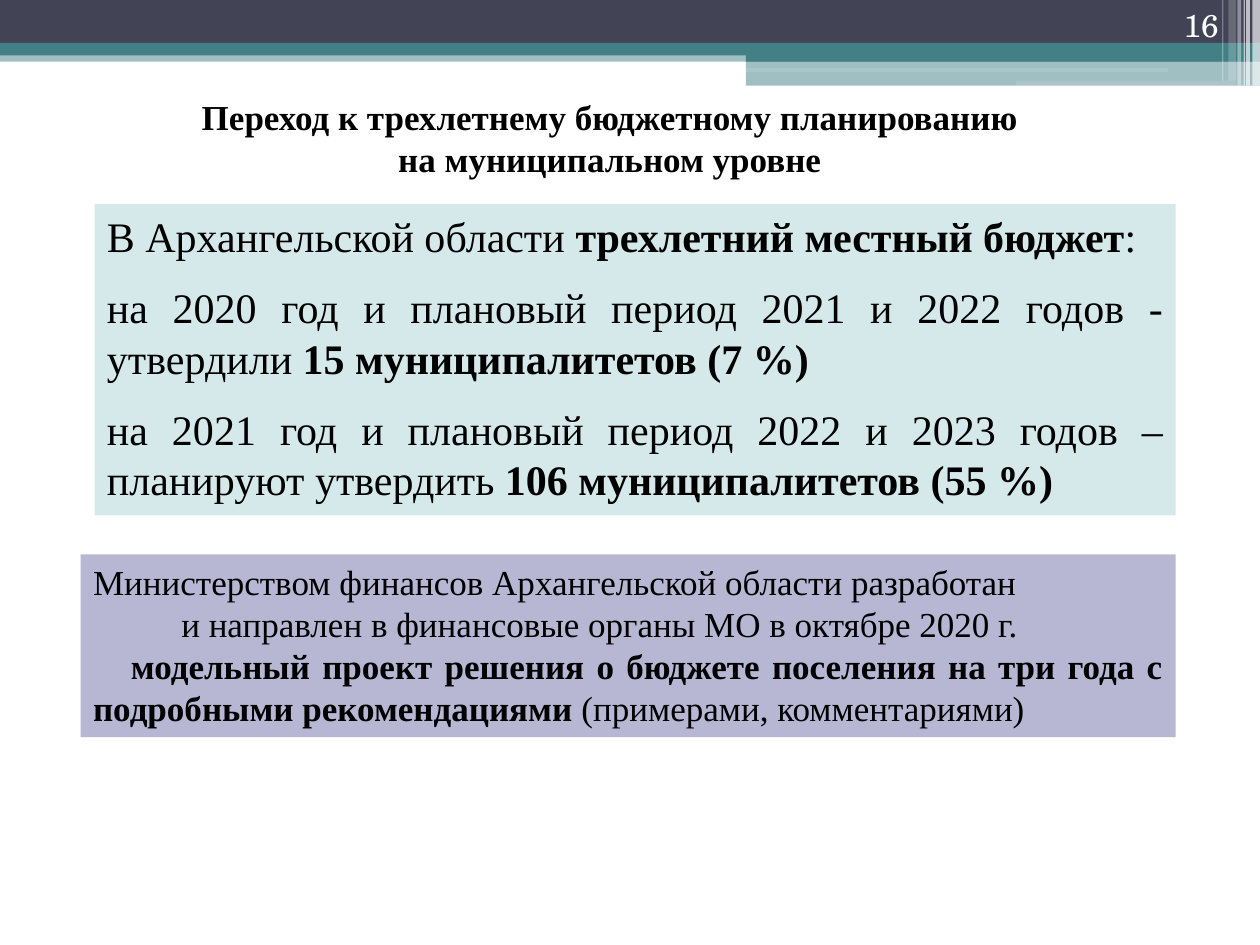
from lxml import etree
from pptx import Presentation
from pptx.dml.color import RGBColor
from pptx.enum.shapes import MSO_SHAPE
from pptx.enum.text import MSO_ANCHOR, MSO_AUTO_SIZE, PP_ALIGN
from pptx.oxml.ns import qn
from pptx.util import Inches, Pt

RECT, ROUND = MSO_SHAPE.RECTANGLE, MSO_SHAPE.ROUNDED_RECTANGLE
TOP, MIDDLE, BOTTOM = MSO_ANCHOR.TOP, MSO_ANCHOR.MIDDLE, MSO_ANCHOR.BOTTOM
LEFT, CENTER, RIGHT = PP_ALIGN.LEFT, PP_ALIGN.CENTER, PP_ALIGN.RIGHT
JUSTIFY = PP_ALIGN.JUSTIFY
FIXED = MSO_AUTO_SIZE.NONE
SERIF, SCHOLA = "Times New Roman", "TeX Gyre Schola"
NAVY, TEAL, WHITE, BLACK = "424456", "438086", "FFFFFF", "000000"
MINT, LILAC = "D6E9EA", "B7B7D4"


def color(code):
    return RGBColor.from_string(code)


def block(slide, box, fill, alpha=100, kind=RECT):
    shape = slide.shapes.add_shape(kind, *map(Inches, box))
    shape.shadow.inherit = False
    shape.line.fill.background()
    shape.fill.solid()
    shape.fill.fore_color.rgb = color(fill)
    if alpha < 100:
        tint = shape.fill._xPr.find(qn("a:solidFill"))[0]
        etree.SubElement(tint, qn("a:alpha"), val=str(alpha * 1000))
    return shape


def write(para, text, size=20, font=SERIF, ink=BLACK, bold=False,
          align=JUSTIFY, indent=0, before=0):
    para.alignment = align
    para.space_before = Pt(before)
    para._p.get_or_add_pPr().set("indent", str(Inches(indent)))
    for index, part in enumerate(text.split("**")):
        if not part:
            continue
        if "\v" in part:
            para.text = part
            runs = para.runs
        else:
            runs = [para.add_run()]
            runs[0].text = part
        for run in runs:
            run.font.size = Pt(size)
            run.font.name = font
            run.font.bold = bold or index % 2 == 1
            run.font.color.rgb = color(ink)


def frame(shape, anchor=TOP):
    body = shape.text_frame
    body.word_wrap = True
    body.auto_size = FIXED
    body.vertical_anchor = anchor
    return body


def banner(slide, box):
    x, y, w, h = box
    mid = x + 0.592 * w
    end = x + w
    block(slide, (x, y + 0.4, w, 0.09), TEAL, 50)
    block(slide, (x, y, w, 0.34), NAVY)
    block(slide, (x, y + 0.34, w, 0.1), TEAL)
    block(slide, (mid, y + 0.39, end - mid, 0.1), TEAL)
    block(slide, (mid, y + 0.48, end - mid, h - 0.48), TEAL, 50)
    block(slide, (mid, y + 0.54, 3.35, 0.03), WHITE, 11, ROUND)
    block(slide, (end - 1.94, y + 0.64, 1.75, 0.04), WHITE, 11, ROUND)
    stripes = [(0.06, 0.06, h, 65), (0.11, 0.03, h, 65), (0.13, 0.01, h, 60),
               (0.18, 0.03, h, 40), (0.25, 0.06, 0.64, 20),
               (0.3, 0.01, 0.64, 30)]
    for back, wide, tall, alpha in stripes:
        block(slide, (end - back, y, wide, tall), WHITE, alpha)


def heading(slide, box, text):
    title = slide.shapes.title
    title.left, title.top, title.width, title.height = map(Inches, box)
    write(frame(title, MIDDLE).paragraphs[0], text, bold=True, align=CENTER)


def number(slide, box, text):
    label = slide.shapes.add_textbox(*map(Inches, box))
    write(frame(label, BOTTOM).paragraphs[0], text, size=18, font=SCHOLA,
          ink=WHITE, align=RIGHT)


def panel(slide, box, fill, lines, **style):
    body = frame(block(slide, box, fill))
    for index, (text, extra) in enumerate(lines):
        para = body.add_paragraph() if index else body.paragraphs[0]
        write(para, text, **style, **extra)


def main():
    deck = Presentation()
    deck.slide_width, deck.slide_height = Inches(10), Inches(7.5)
    slide = deck.slides.add_slide(deck.slide_layouts[5])
    banner(slide, (0, 0, 10, 0.68))
    heading(slide, (-0.16, 0.71, 10, 0.76),
            "Переход к трехлетнему бюджетному планированию\v"
            "на муниципальном уровне")
    number(slide, (8.94, 0, 0.83, 0.4), "16")
    panel(slide, (0.75, 1.62, 8.58, 2.47), MINT, [
        ("В Архангельской области **трехлетний местный бюджет**:", {}),
        ("на 2020 год и плановый период 2021 и 2022 годов - утвердили "
         "**15 муниципалитетов (7 %)**", {"before": 12}),
        ("на 2021 год и плановый период 2022 и 2023 годов – планируют "
         "утвердить **106 муниципалитетов (55 %)**", {"before": 12}),
    ], size=24)
    panel(slide, (0.64, 4.4, 8.69, 1.45), LILAC, [
        ("Министерством финансов Архангельской области разработан",
         {"align": LEFT}),
        ("и направлен в финансовые органы МО в октябре 2020 г.",
         {"align": LEFT, "indent": 0.7}),
        ("**модельный проект решения о бюджете поселения на три года с "
         "подробными рекомендациями **(примерами, комментариями)",
         {"indent": 0.3}),
    ])
    deck.save("out.pptx")


if __name__ == "__main__":
    main()
